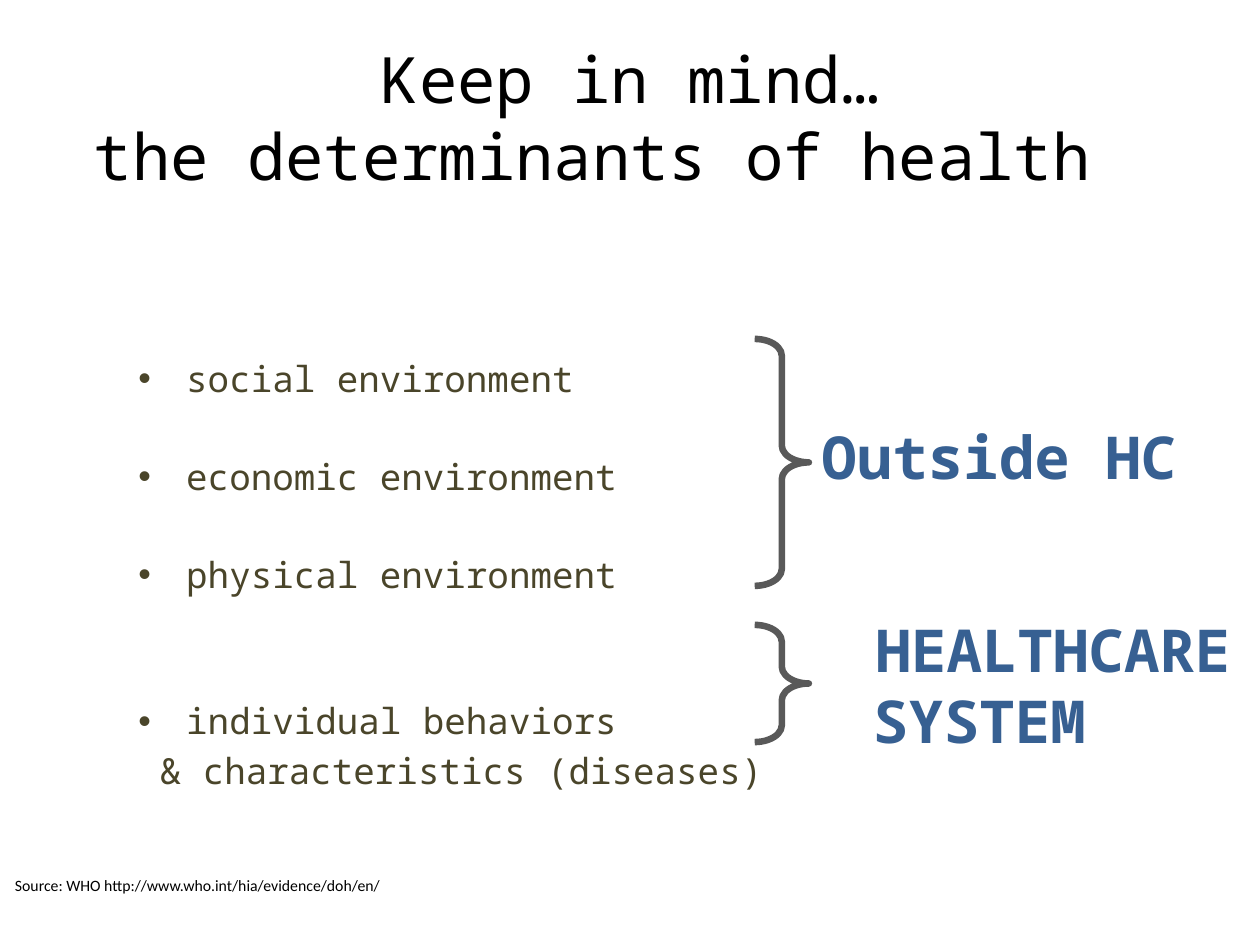
import pptx
import pptx.util
import pptx.dml.color
import pptx.enum.shapes
import pptx.enum.text
from pptx.util import Inches

COLORS = {"title": "000000", "body": "4A452A", "label": "376092", "brace": "595959"}
MONO = "Noto Sans Mono"
ALIGN = pptx.enum.text.PP_ALIGN
ANCHOR = pptx.enum.text.MSO_ANCHOR

deck = pptx.Presentation()
deck.slide_width, deck.slide_height = Inches(10), Inches(7.5)
slide = deck.slides.add_slide(deck.slide_layouts[6])


def add_text(paragraphs, at, size, color, font=MONO, bold=False, wrap=True, anchor=ANCHOR.TOP):
    """Each paragraph is a dict: text, and optionally align, before, margin, bullet."""
    frame = slide.shapes.add_textbox(*map(Inches, at)).text_frame
    frame.word_wrap = wrap
    frame.vertical_anchor = anchor
    for number, item in enumerate(paragraphs):
        line = frame.add_paragraph() if number else frame.paragraphs[0]
        line.text = item["text"]
        line.alignment = item.get("align", ALIGN.LEFT)
        line.space_before = pptx.util.Pt(item.get("before", 0))
        line.font.size = pptx.util.Pt(size)
        line.font.name = font
        line.font.bold = bold
        line.font.color.rgb = pptx.dml.color.RGBColor.from_string(COLORS[color])
        properties = line._p.get_or_add_pPr()
        properties.set("marL", str(Inches(item.get("margin", 0))))
        if item.get("bullet"):
            properties.set("indent", str(-Inches(item["margin"])))
            bullet_font = pptx.oxml.xmlchemy.OxmlElement("a:buFont")
            bullet_font.set("typeface", "Arial")
            bullet = pptx.oxml.xmlchemy.OxmlElement("a:buChar")
            bullet.set("char", "•")
            properties.extend([bullet_font, bullet])


# Title
add_text([{"text": "Keep in mind…\vthe determinants of health  ", "align": ALIGN.CENTER}],
         (0.5, 0.3, 9, 1.25), 36.5, "title", anchor=ANCHOR.MIDDLE)

# Determinants, with a wider gap before the individual ones
determinants = [("social environment", 0), ("economic environment", 31.5),
                ("physical environment", 31.5), ("individual behaviors", 59)]
body = [{"text": text, "before": gap, "margin": 0.38, "bullet": True}
        for text, gap in determinants]
body.append({"text": "& characteristics (diseases)", "before": 4, "margin": 0.17})
add_text(body, (1, 2.78, 7.2, 3.37), 20.5, "body")

# Source line
add_text([{"text": "Source: WHO http://www.who.int/hia/evidence/doh/en/"}],
         (0.02, 6.9, 3.15, 0.25), 9, "title", font="Calibri", wrap=False)

# Labels of the two groups
outside = [{"text": "Outside HC", "align": ALIGN.CENTER}]
healthcare = [{"text": "HEALTHCARE", "align": ALIGN.CENTER}, {"text": "SYSTEM"}]
for label, at in [(outside, (6.4, 3.29, 3.06, 0.67)), (healthcare, (6.83, 4.82, 3.06, 1.24))]:
    add_text(label, at, 33.8, "label", bold=True, wrap=False)

# Braces that join the determinants to their labels
for top, height in [(2.69, 1.96), (4.96, 0.93)]:
    brace = slide.shapes.add_shape(pptx.enum.shapes.MSO_SHAPE.RIGHT_BRACE, Inches(5.99),
                                   Inches(top), Inches(0.43), Inches(height))
    brace.adjustments[0], brace.adjustments[1] = 0.31, 0.5
    brace.shadow.inherit = False
    brace.fill.background()
    brace.line.color.rgb = pptx.dml.color.RGBColor.from_string(COLORS["brace"])
    brace.line.width = pptx.util.Pt(3.75)

deck.save("out.pptx")
